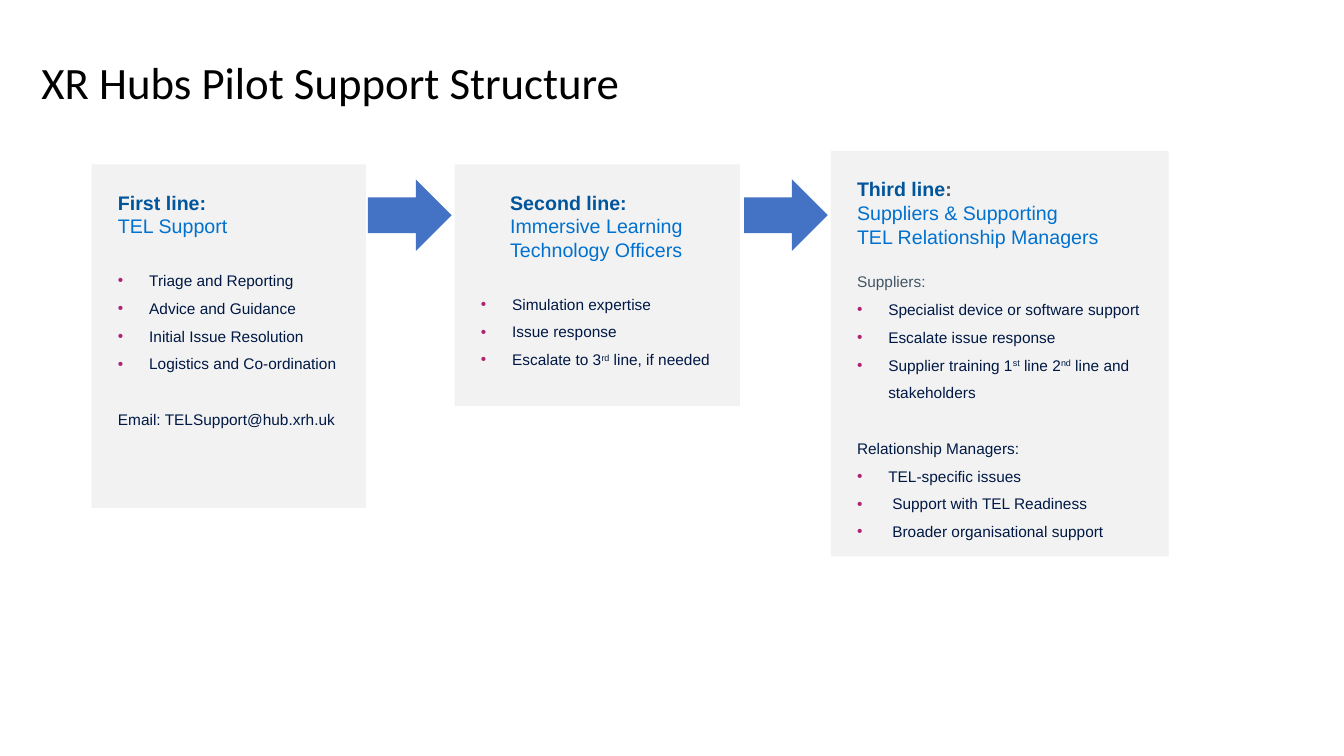
"""Build the support structure slide: three lines of support joined by arrows."""
from dataclasses import dataclass

from lxml import etree
from pptx import Presentation
from pptx.dml.color import RGBColor
from pptx.enum.shapes import MSO_SHAPE
from pptx.enum.text import MSO_ANCHOR, MSO_AUTO_SIZE, PP_ALIGN
from pptx.oxml.ns import qn
from pptx.util import Inches, Pt

RECTANGLE = MSO_SHAPE.RECTANGLE
RIGHT_ARROW = MSO_SHAPE.RIGHT_ARROW
TOP, MIDDLE = MSO_ANCHOR.TOP, MSO_ANCHOR.MIDDLE
LEFT = PP_ALIGN.LEFT
NO_AUTOFIT = MSO_AUTO_SIZE.NONE


@dataclass(frozen=True)
class Theme:
    """Colours, fonts, type sizes and spacing of the slide."""
    black: str = "000000"
    panel: str = "F2F2F2"
    arrow: str = "4472C4"
    heading: str = "00559B"
    team: str = "0071CE"
    body: str = "001844"
    muted: str = "425563"
    bullet: str = "AE2473"
    title_font: str = "Calibri"
    body_font: str = "Arial"
    title_size: float = 32
    heading_size: float = 14
    body_size: float = 11
    after_heading: float = 17.5
    after_list: float = 26.5
    padding: float = 0.26
    hang: float = 0.31


THEME = Theme()


@dataclass(frozen=True)
class Line:
    """One paragraph; each second part between carets is superscript."""
    text: str
    color: str = THEME.body
    size: float = THEME.body_size
    bold: bool = False
    indent: float = 0
    bulleted: bool = False
    gap: float = 0


def heading(text, indent=0):
    """Return the bold first line of a panel."""
    return Line(text, THEME.heading, THEME.heading_size, True, indent)


def team(text, indent=0):
    """Return a line that names who gives the support."""
    return Line(text, THEME.team, THEME.heading_size, indent=indent)


def bullets(*texts, gap=0, indent=THEME.hang):
    """Return bulleted lines, with a gap above the first."""
    return [Line(text, indent=indent, bulleted=True, gap=0 if i else gap)
            for i, text in enumerate(texts)]


def style_run(run, font, size, color, bold=False):
    """Set the type of one run."""
    run.font.name = font
    run.font.size = Pt(size)
    run.font.bold = bold
    run.font.color.rgb = RGBColor.from_string(color)


def add_bullet(properties):
    """Add a coloured bullet to paragraph properties."""
    color = etree.SubElement(properties, qn("a:buClr"))
    etree.SubElement(color, qn("a:srgbClr"), val=THEME.bullet)
    etree.SubElement(properties, qn("a:buFont"), typeface=THEME.body_font)
    etree.SubElement(properties, qn("a:buChar"), char="•")


def write_line(paragraph, line):
    """Write one line of a panel into its paragraph."""
    paragraph.alignment = LEFT
    paragraph.line_spacing = 1.5 if line.bulleted else 1.0
    paragraph.space_before = Pt(line.gap)
    properties = paragraph._p.get_or_add_pPr()
    properties.set("marL", str(Inches(line.indent)))
    if line.bulleted:
        properties.set("indent", str(-Inches(line.indent)))
        add_bullet(properties)
    for i, part in enumerate(line.text.split("^")):
        run = paragraph.add_run()
        run.text = part
        style_run(run, THEME.body_font, line.size, line.color, line.bold)
        if i % 2:
            run._r.get_or_add_rPr().set("baseline", "30000")


def set_frame(frame, inset, anchor):
    """Set wrapping, insets and anchor of a text frame."""
    frame.word_wrap = True
    frame.auto_size = NO_AUTOFIT
    frame.vertical_anchor = anchor
    frame.margin_left = frame.margin_right = Inches(inset)
    frame.margin_top = frame.margin_bottom = Inches(inset)


def add_block(slide, kind, box, color):
    """Add a flat filled shape without an outline."""
    block = slide.shapes.add_shape(kind, *map(Inches, box))
    block.shadow.inherit = False
    block.fill.solid()
    block.fill.fore_color.rgb = RGBColor.from_string(color)
    block.line.fill.background()
    return block


def add_panel(slide, box, lines):
    """Add a grey panel with its lines and return its text frame."""
    frame = add_block(slide, RECTANGLE, box, THEME.panel).text_frame
    set_frame(frame, THEME.padding, TOP)
    for i, line in enumerate(lines):
        write_line(frame.add_paragraph() if i else frame.paragraphs[0], line)
    return frame


def add_title(slide, text):
    """Add the slide title."""
    box = map(Inches, (0.41, 0.41, 11.71, 0.87))
    frame = slide.shapes.add_textbox(*box).text_frame
    set_frame(frame, 0, MIDDLE)
    frame.text = text
    frame.paragraphs[0].line_spacing = 0.9
    style_run(frame.paragraphs[0].runs[0], THEME.title_font,
              THEME.title_size, THEME.black)


def main():
    """Build and save the slide."""
    deck = Presentation()
    deck.slide_width, deck.slide_height = Inches(13.33), Inches(7.5)
    slide = deck.slides.add_slide(deck.slide_layouts[6])
    add_title(slide, "XR Hubs Pilot Support Structure")

    add_panel(slide, (0.91, 1.63, 2.72, 3.41), [
        heading("First line:"),
        team("TEL Support"),
        *bullets("Triage and Reporting", "Advice and Guidance",
                 "Initial Issue Resolution", "Logistics and Co-ordination",
                 gap=THEME.after_heading),
        Line("Email: TELSupport@hub.xrh.uk", gap=THEME.after_list),
    ])
    add_panel(slide, (4.51, 1.63, 2.83, 2.4), [
        heading("Second line:", 0.29),
        team("Immersive Learning", 0.29),
        team("Technology Officers", 0.29),
        *bullets("Simulation expertise", "Issue response",
                 "Escalate to 3^rd^ line, if needed",
                 gap=THEME.after_heading),
    ])
    third_line = add_panel(slide, (8.24, 1.5, 3.35, 4.02), [
        heading("Third line"),
        team("Suppliers & Supporting"),
        team("TEL Relationship Managers"),
        Line("Suppliers:", THEME.muted, gap=THEME.after_heading),
        *bullets("Specialist device or software support",
                 "Escalate issue response",
                 "Supplier training 1^st^ line 2^nd^ line and stakeholders"),
        Line("Relationship Managers:", gap=THEME.after_list),
        *bullets("TEL-specific issues"),
        *bullets("Support with TEL Readiness",
                 "Broader organisational support", indent=0.35),
    ])
    colon = third_line.paragraphs[0].add_run()
    colon.text = ":"
    style_run(colon, THEME.body_font, THEME.heading_size, THEME.muted, True)

    for arrow_left in (3.65, 7.38):
        add_block(slide, RIGHT_ARROW, (arrow_left, 1.78, 0.83, 0.71),
                  THEME.arrow)
    deck.save("out.pptx")


if __name__ == "__main__":
    main()
